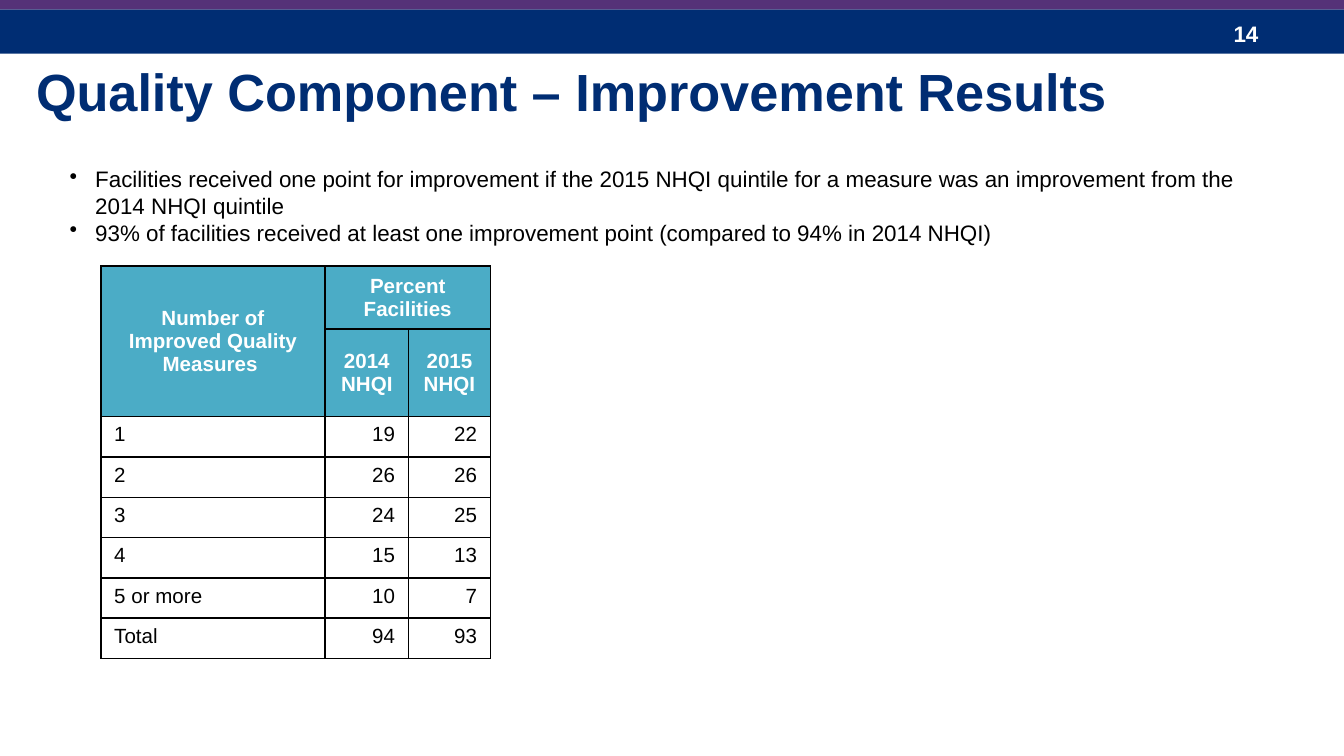
from dataclasses import dataclass

from lxml import etree
from pptx import Presentation
from pptx import util as u
from pptx.dml.color import RGBColor
from pptx.enum import shapes, text
from pptx.oxml.ns import qn


@dataclass(frozen=True)
class Theme:
    font: str = "Arial"
    navy: str = "002D73"
    purple: str = "553278"
    teal: str = "4BACC6"
    white: str = "FFFFFF"
    black: str = "000000"
    title_size: int = 28
    body_size: int = 12
    table_size: int = 11


THEME = Theme()
WIDTH = 10
HEIGHT = WIDTH * 9 / 16

BULLETS = [
    "Facilities received one point for improvement if the 2015 NHQI quintile "
    "for a measure was an improvement from the 2014 NHQI quintile",
    "93% of facilities received at least one improvement point "
    "(compared to 94% in 2014 NHQI)",
]
HEADER = [
    ["Number of Improved Quality Measures ", "Percent Facilities", ""],
    ["", "2014 NHQI", "2015 NHQI"],
]
RESULTS = [
    ["1", "19", "22"],
    ["2", "26", "26"],
    ["3", "24", "25"],
    ["4", "15", "13"],
    ["5 or more", "10", "7"],
    ["Total", "94", "93"],
]
COLUMN_WIDTHS = [1.67, 0.62, 0.61]
HEADER_HEIGHTS = [0.47, 0.65]
RESULT_HEIGHT = 0.3


def inches(*lengths):
    return [u.Inches(length) for length in lengths]


def style(paragraph, size, color, bold=False):
    font = paragraph.font
    font.name, font.size, font.bold = THEME.font, u.Pt(size), bold
    font.color.rgb = RGBColor.from_string(color)


def add_band(slide, top, height, color):
    """Draw a coloured strip across the full slide width."""
    band = slide.shapes.add_shape(
        shapes.MSO_SHAPE.RECTANGLE, *inches(0, top, WIDTH, height))
    band.shadow.inherit = False
    band.fill.solid()
    band.fill.fore_color.rgb = RGBColor.from_string(color)
    band.line.fill.background()


def add_text_frame(slide, left, top, width, height):
    frame = slide.shapes.add_textbox(*inches(left, top, width, height)).text_frame
    frame.word_wrap = True
    return frame


def add_line(slide, box, words, size, color):
    """Add one bold, vertically centred line of text."""
    frame = add_text_frame(slide, *box)
    frame.vertical_anchor = text.MSO_ANCHOR.MIDDLE
    frame.text = words
    style(frame.paragraphs[0], size, color, bold=True)


def add_bullets(slide, box, items):
    frame = add_text_frame(slide, *box)
    frame.margin_top = u.Inches(0.25)
    for index, item in enumerate(items):
        paragraph = frame.add_paragraph() if index else frame.paragraphs[0]
        paragraph.text = item
        properties = paragraph._p.get_or_add_pPr()
        indent = u.Inches(0.19)
        properties.set("marL", str(indent))
        properties.set("indent", str(-indent))
        etree.SubElement(properties, qn("a:buChar"), char="•")
        style(paragraph, THEME.body_size, THEME.black)


def add_borders(cell):
    """Rule all four sides; borders must precede the fill in the cell XML."""
    properties = cell._tc.get_or_add_tcPr()
    for position, side in enumerate(("lnL", "lnR", "lnT", "lnB")):
        line = etree.Element(qn(f"a:{side}"), w=str(u.Pt(1)))
        fill = etree.SubElement(line, qn("a:solidFill"))
        etree.SubElement(fill, qn("a:srgbClr"), val=THEME.black)
        properties.insert(position, line)


def fill_cell(cell, words, is_header, is_label):
    cell.text = words
    paragraph = cell.text_frame.paragraphs[0]
    if is_header:
        cell.fill.solid()
        cell.fill.fore_color.rgb = RGBColor.from_string(THEME.teal)
        cell.vertical_anchor = text.MSO_ANCHOR.MIDDLE
        paragraph.alignment = text.PP_ALIGN.CENTER
    else:
        cell.fill.background()
        paragraph.alignment = (
            text.PP_ALIGN.LEFT if is_label else text.PP_ALIGN.RIGHT)
    style(paragraph, THEME.table_size,
          THEME.white if is_header else THEME.black, bold=is_header)
    add_borders(cell)


def add_results_table(slide, left, top):
    rows = HEADER + RESULTS
    heights = HEADER_HEIGHTS + [RESULT_HEIGHT] * len(RESULTS)
    table = slide.shapes.add_table(
        len(rows), len(COLUMN_WIDTHS),
        *inches(left, top, sum(COLUMN_WIDTHS), sum(heights))).table
    for column, width in zip(table.columns, COLUMN_WIDTHS):
        column.width = u.Inches(width)
    for row, height in zip(table.rows, heights):
        row.height = u.Inches(height)
    for r, values in enumerate(rows):
        for c, value in enumerate(values):
            fill_cell(table.cell(r, c), value, r < len(HEADER), c == 0)
    table.cell(0, 0).merge(table.cell(1, 0))
    table.cell(0, 1).merge(table.cell(0, 2))


def main():
    presentation = Presentation()
    presentation.slide_width, presentation.slide_height = inches(WIDTH, HEIGHT)
    slide = presentation.slides.add_slide(presentation.slide_layouts[6])

    add_band(slide, 0.07, 0.33, THEME.navy)
    add_line(slide, (9.08, 0.1, 0.75, 0.3), "14", THEME.body_size, THEME.white)
    add_band(slide, -0.02, 0.09, THEME.purple)
    add_line(slide, (0.17, 0.39, 9.5, 0.57),
             "Quality Component – Improvement Results",
             THEME.title_size, THEME.navy)
    add_bullets(slide, (0.42, 0.98, 9, 1.72), BULLETS)
    add_results_table(slide, 0.75, 1.98)

    presentation.save("out.pptx")


if __name__ == "__main__":
    main()
